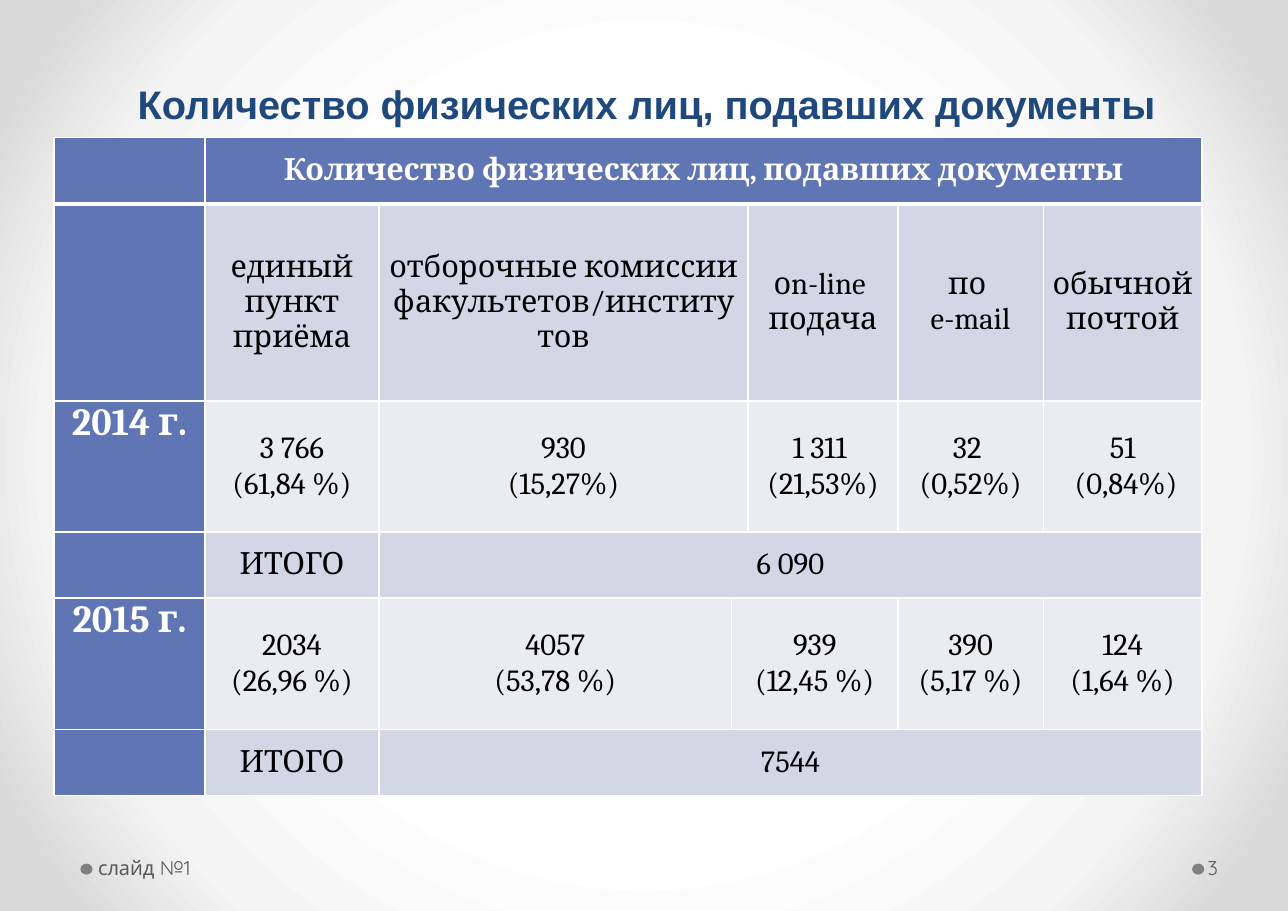
from lxml import etree
from pptx import Presentation
from pptx.dml.color import RGBColor
from pptx.enum import shapes, text
from pptx.oxml import parse_xml
from pptx.oxml.ns import qn
from pptx.util import Inches, Pt

NAMESPACE = "http://schemas.openxmlformats.org/drawingml/2006/main"
TITLE = "Количество физических лиц, подавших документы"
BLUE, BAND, PALE, WHITE, BLACK = "6076B4", "D2D6E5", "EAECF2", "FFFFFF", "000000"

COLUMNS = [1.37, 1.58, 3.2, 0.15, 1.36, 1.32, 1.44]
HEIGHTS = [0.6, 1.79, 1.19, 0.6, 1.19, 0.6]
FILLS = [BLUE, BAND, PALE, BAND, PALE, BAND]
# Each row maps a starting column to the text there; a cell runs on to the next start.
ROWS = [
    {0: "", 1: TITLE},
    {0: "", 1: "единый пункт приёма", 2: "отборочные комиссии факультетов/институтов",
     4: "оn-line \nподача", 5: "по \ne-mail", 6: "обычной почтой"},
    {0: "2014 г.", 1: "3 766\n(61,84 %)", 2: "930\n(15,27%)", 4: "1 311 \n(21,53%)",
     5: "32 \n(0,52%)", 6: "51\n (0,84%)"},
    {0: "", 1: "ИТОГО", 2: "6 090"},
    {0: "2015 г.", 1: "2034\n(26,96 %)", 2: "4057\n(53,78 %)", 3: "939\n(12,45 %)",
     5: "390\n(5,17 %)", 6: "124\n(1,64 %)"},
    {0: "", 1: "ИТОГО", 2: "7544"},
]


def colour(value):
    return RGBColor.from_string(value)


def format_text(frame, font, size, value, bold=False, align=None):
    for para in frame.paragraphs:
        para.alignment = align
        for span in para.runs:
            span.font.name = font
            span.font.size = Pt(size)
            span.font.bold = bold
            span.font.color.rgb = colour(value)


def set_margins(target, left, top, right, bottom):
    target.margin_left, target.margin_top = Inches(left), Inches(top)
    target.margin_right, target.margin_bottom = Inches(right), Inches(bottom)


def place(shape, left, top, width, height):
    shape.left, shape.top = Inches(left), Inches(top)
    shape.width, shape.height = Inches(width), Inches(height)


def paint_background(page):
    """Fill the page with a radial gradient, white in the middle."""
    page.background.fill.gradient()
    gradient = page.element.find(".//" + qn("a:gradFill"))
    stops = "".join(
        f'<a:gs pos="{percent * 1000}"><a:srgbClr val="{value}"/></a:gs>'
        for percent, value in [(50, WHITE), (76, "F4F4F4"), (92, "DADADA")])
    radial = parse_xml(
        f'<a:gradFill xmlns:a="{NAMESPACE}" rotWithShape="1"><a:gsLst>{stops}</a:gsLst>'
        '<a:path path="circle"><a:fillToRect l="50000" t="50000" r="50000" b="50000"/>'
        '</a:path></a:gradFill>')
    gradient.getparent().replace(gradient, radial)


def add_title(page):
    title = page.shapes.title
    place(title, 1.12, 0.67, 9.51, 0.56)
    frame = title.text_frame
    frame.text = TITLE
    frame.word_wrap = False
    frame.auto_size = text.MSO_AUTO_SIZE.NONE
    frame.vertical_anchor = text.MSO_ANCHOR.TOP
    set_margins(frame, 0.11, 0.05, 0.11, 0.05)
    format_text(frame, "Arial", 26, "1F497D", True, text.PP_ALIGN.CENTER)


def add_dot(page, left):
    dot = page.shapes.add_shape(shapes.MSO_SHAPE.OVAL, Inches(left), Inches(7.84),
                                Inches(0.11), Inches(0.1))
    dot.shadow.inherit = False
    dot.fill.solid()
    dot.fill.fore_color.rgb = colour("808080")
    dot.line.fill.background()


def add_footer(page, words, left, width, inset_left, inset_right):
    box = page.shapes.add_textbox(Inches(left), Inches(7.66), Inches(width), Inches(0.44))
    frame = box.text_frame
    frame.text = words
    frame.word_wrap = True
    frame.vertical_anchor = text.MSO_ANCHOR.MIDDLE
    set_margins(frame, inset_left, 0.05, inset_right, 0.05)
    format_text(frame, "Quicksand", 13, "595959")


def set_borders(cell, top, bottom):
    """Draw white borders, with top and bottom widths in points."""
    properties = cell._tc.get_or_add_tcPr()
    sides = [("lnL", 1), ("lnR", 1), ("lnT", top), ("lnB", bottom)]
    for index, (side, width) in enumerate(sides):
        line = etree.Element(qn(f"a:{side}"), w=str(Pt(width)))
        fill = etree.SubElement(line, qn("a:solidFill"))
        etree.SubElement(fill, qn("a:srgbClr"), val=WHITE)
        properties.insert(index, line)


def fill_cell(cell, words, row, column):
    cell.text = words
    is_year = column == 0
    is_heading = is_year or row == 0
    if words:
        set_margins(cell, 0.07, 0, 0.07, 0)
    cell.vertical_anchor = text.MSO_ANCHOR.TOP if is_year else text.MSO_ANCHOR.MIDDLE
    format_text(cell.text_frame, "Cambria", 25 if is_year else 20,
                WHITE if is_heading else BLACK, is_heading, text.PP_ALIGN.CENTER)


def add_applicant_table(page):
    frame = page.shapes.add_table(len(ROWS), len(COLUMNS), Inches(0.49), Inches(1.25),
                                  Inches(sum(COLUMNS)), Inches(sum(HEIGHTS)))
    table = frame.table
    for column, width in zip(table.columns, COLUMNS):
        column.width = Inches(width)
    for row, texts in enumerate(ROWS):
        table.rows[row].height = Inches(HEIGHTS[row])
        for column in range(len(COLUMNS)):
            cell = table.cell(row, column)
            cell.fill.solid()
            cell.fill.fore_color.rgb = colour(FILLS[row] if column else BLUE)
            set_borders(cell, 3 if row == 1 else 1, 3 if row == 0 else 1)
        starts = list(texts)
        for start, following in zip(starts, starts[1:] + [len(COLUMNS)]):
            cell = table.cell(row, start)
            if following - start > 1:
                cell.merge(table.cell(row, following - 1))
            fill_cell(cell, texts[start], row, start)


def main():
    deck = Presentation()
    deck.slide_width, deck.slide_height = Inches(11.69), Inches(8.27)
    page = deck.slides.add_slide(deck.slide_layouts[5])
    paint_background(page)
    for left in (10.82, 0.73):
        add_dot(page, left)
    add_title(page)
    add_footer(page, "слайд №1", 0.84, 3.64, 0.05, 0.11)
    add_footer(page, "3", 10.93, 0.72, 0.03, 0.05)
    add_applicant_table(page)
    deck.save("out.pptx")


if __name__ == "__main__":
    main()
